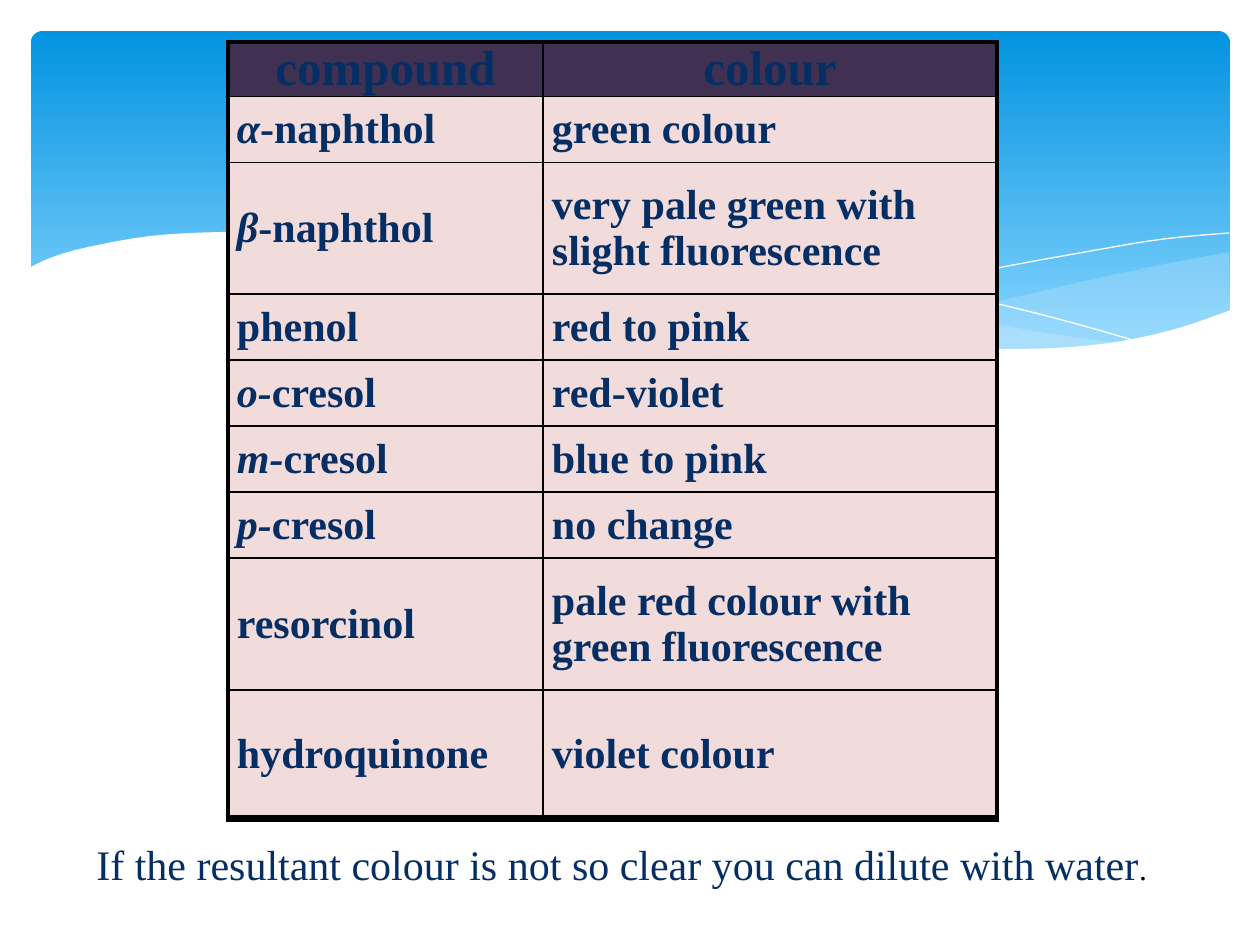
from lxml import etree
from pptx import Presentation
from pptx.dml.color import RGBColor
from pptx.enum.shapes import MSO_SHAPE
from pptx.enum.text import MSO_ANCHOR, PP_ALIGN
from pptx.oxml.ns import qn
from pptx.util import Emu, Pt

ROUNDED = MSO_SHAPE.ROUNDED_RECTANGLE
MIDDLE = MSO_ANCHOR.MIDDLE
LEFT, CENTER, JUSTIFY = PP_ALIGN.LEFT, PP_ALIGN.CENTER, PP_ALIGN.JUSTIFY

FONT = "Times New Roman"
NAVY = RGBColor(0x05, 0x2E, 0x65)
PLUM = RGBColor(0x40, 0x31, 0x52)
ROSE = RGBColor(0xF2, 0xDB, 0xDB)
SKY_TOP = RGBColor(0x02, 0x93, 0xE0)
SKY_BOTTOM = RGBColor(0x83, 0xD3, 0xFE)
MIST = RGBColor(0xC6, 0xE7, 0xFC)
WHITE = RGBColor(0xFF, 0xFF, 0xFF)
BLACK = RGBColor(0, 0, 0)

# Outlines of the banner, in px
RIGHT_SWELL = [
    [(1229, 252), (1160, 265), (1085, 281), (982, 305), (890, 324), (833, 334)],
    [(833, 334), (906, 343), (984, 349), (1052, 349), (1120, 343), (1178, 330), (1230, 311)],
]
LONG_SWELL = [
    [(1125, 344), (1017, 328), (890, 302), (793, 280), (699, 258), (616, 244),
     (529, 236), (455, 233), (360, 241)],
    [(360, 241), (431, 251), (509, 266), (566, 280), (668, 302), (757, 321),
     (857, 338), (959, 349), (1043, 350), (1125, 344)],
]
FALLING_LINE = [(389, 246), (445, 238), (524, 236), (616, 239), (701, 248),
                (801, 262), (916, 285), (1047, 316), (1143, 343)]
RISING_LINE = [(772, 324), (876, 296), (978, 272), (1091, 251), (1164, 239), (1229, 233)]
WHITE_WAVE = [(1231, 310), (1172, 330), (1102, 344), (1019, 349), (937, 345),
              (842, 334), (730, 315), (563, 277), (460, 255), (368, 239),
              (290, 233), (223, 232), (150, 236), (84, 248), (50, 258), (29, 268)]
WAVE_BASE = [(29, 414), (1231, 414)]

# Each row: italic prefix, rest of the compound, colour
RESULTS = [
    ("α", "-naphthol", "green colour"),
    ("β", "-naphthol", "very pale green with slight fluorescence"),
    ("", "phenol", "red to pink"),
    ("o-", "cresol", "red-violet"),
    ("m-", "cresol", "blue to pink"),
    ("p-", "cresol", "no change"),
    ("", "resorcinol", "pale red colour with green fluorescence"),
    ("", "hydroquinone", "violet colour"),
]
COLUMN_WIDTHS = [315, 454]
ROW_HEIGHTS = [38, 66, 132, 66, 66, 66, 66, 132, 128]


def px(length):
    return Emu(round(length * 914400 / 126))


def smooth(points, steps=4):
    """Catmull-Rom curve through the points."""
    padded = [points[0], *points, points[-1]]
    curve = [points[0]]
    for a, b, c, d in zip(padded, padded[1:], padded[2:], padded[3:]):
        for step in range(1, steps + 1):
            t = step / steps
            curve.append(tuple(
                (2 * q + (r - p) * t + (2 * p - 5 * q + 4 * r - s) * t ** 2
                 + (3 * q - p - 3 * r + s) * t ** 3) / 2
                for p, q, r, s in zip(a, b, c, d)))
    return curve


def add_outline(slide, points, close):
    start, *rest = [(px(x), px(y)) for x, y in points]
    builder = slide.shapes.build_freeform(*start)
    builder.add_line_segments(rest, close=close)
    outline = builder.convert_to_shape()
    outline.shadow.inherit = False
    return outline


def add_area(slide, points, color, opacity=100):
    area = add_outline(slide, points, True)
    area.fill.solid()
    area.fill.fore_color.rgb = color
    area.line.fill.background()
    if opacity < 100:
        tint = area.fill._xPr.find(".//" + qn("a:srgbClr"))
        etree.SubElement(tint, qn("a:alpha"), val=str(opacity * 1000))


def add_curve(slide, points):
    curve = add_outline(slide, smooth(points), False)
    curve.fill.background()
    curve.line.color.rgb = WHITE
    curve.line.width = Pt(0)


def add_banner(slide):
    sky = slide.shapes.add_shape(ROUNDED, px(31), px(31), px(1199), px(340))
    sky.adjustments[0] = 0.034
    sky.shadow.inherit = False
    sky.line.fill.background()
    sky.fill.gradient()
    sky.fill.gradient_angle = 270
    for stop, color, position in zip(sky.fill.gradient_stops, (SKY_TOP, SKY_BOTTOM), (0, 0.9)):
        stop.color.rgb = color
        stop.position = position
    add_area(slide, smooth(RIGHT_SWELL[0]) + smooth(RIGHT_SWELL[1]), MIST, 29)
    add_area(slide, smooth(LONG_SWELL[0]) + smooth(LONG_SWELL[1]), MIST, 40)
    add_curve(slide, FALLING_LINE)
    add_curve(slide, RISING_LINE)
    add_area(slide, smooth(WHITE_WAVE) + WAVE_BASE, WHITE)


def set_borders(cell, widths):
    properties = cell._tc.get_or_add_tcPr()
    for side, width in zip("LRTB", widths):
        border = etree.SubElement(properties, qn("a:ln" + side), w=str(Pt(width)))
        fill = etree.SubElement(border, qn("a:solidFill"))
        etree.SubElement(fill, qn("a:srgbClr"), val=str(BLACK))


def fill_cell(cell, prefix, text, size, align, color):
    cell.fill.solid()
    cell.fill.fore_color.rgb = color
    cell.vertical_anchor = MIDDLE
    cell.margin_left = cell.margin_right = px(9)
    cell.margin_top = cell.margin_bottom = 0
    paragraph = cell.text_frame.paragraphs[0]
    paragraph.alignment = align
    set_font(paragraph.font, size, NAVY, bold=True)
    if prefix:
        start = paragraph.add_run()
        start.text = prefix
        start.font.italic = True
    paragraph.add_run().text = text


def set_font(font, size, color, bold=False):
    font.name = FONT
    font.size = Pt(size)
    font.bold = bold
    font.color.rgb = color


def add_results(slide):
    rows, columns = len(ROW_HEIGHTS), len(COLUMN_WIDTHS)
    table = slide.shapes.add_table(rows, columns, px(228), px(42), px(sum(COLUMN_WIDTHS)),
                                   px(sum(ROW_HEIGHTS))).table
    for column, width in zip(table.columns, COLUMN_WIDTHS):
        column.width = px(width)
    for row, height in zip(table.rows, ROW_HEIGHTS):
        row.height = px(height)
    for r in range(rows):
        for c in range(columns):
            set_borders(table.cell(r, c), (3 if c == 0 else 1, 3 if c == columns - 1 else 1,
                                           3 if r == 0 else 1, 4.5 if r == rows - 1 else 1))
    for c, heading in enumerate(("compound", "colour")):
        fill_cell(table.cell(0, c), "", heading, 28, CENTER, PLUM)
    for r, (prefix, compound, colour) in enumerate(RESULTS, 1):
        fill_cell(table.cell(r, 0), prefix, compound, 24, LEFT, ROSE)
        fill_cell(table.cell(r, 1), "", colour, 24, LEFT, ROSE)


def add_advice(slide):
    frame = slide.shapes.add_textbox(px(84), px(832), px(1092), px(63)).text_frame
    frame.word_wrap = True
    paragraph = frame.paragraphs[0]
    paragraph.alignment = JUSTIFY
    for text, size, color in (
            ("If the resultant colour is not so clear you can dilute with water", 24, NAVY),
            (".", 18, BLACK)):
        run = paragraph.add_run()
        run.text = text
        set_font(run.font, size, color)


def main():
    deck = Presentation()
    deck.slide_width, deck.slide_height = px(1260), px(945)
    slide = deck.slides.add_slide(deck.slide_layouts[6])
    add_banner(slide)
    add_results(slide)
    add_advice(slide)
    deck.save("out.pptx")


if __name__ == "__main__":
    main()
